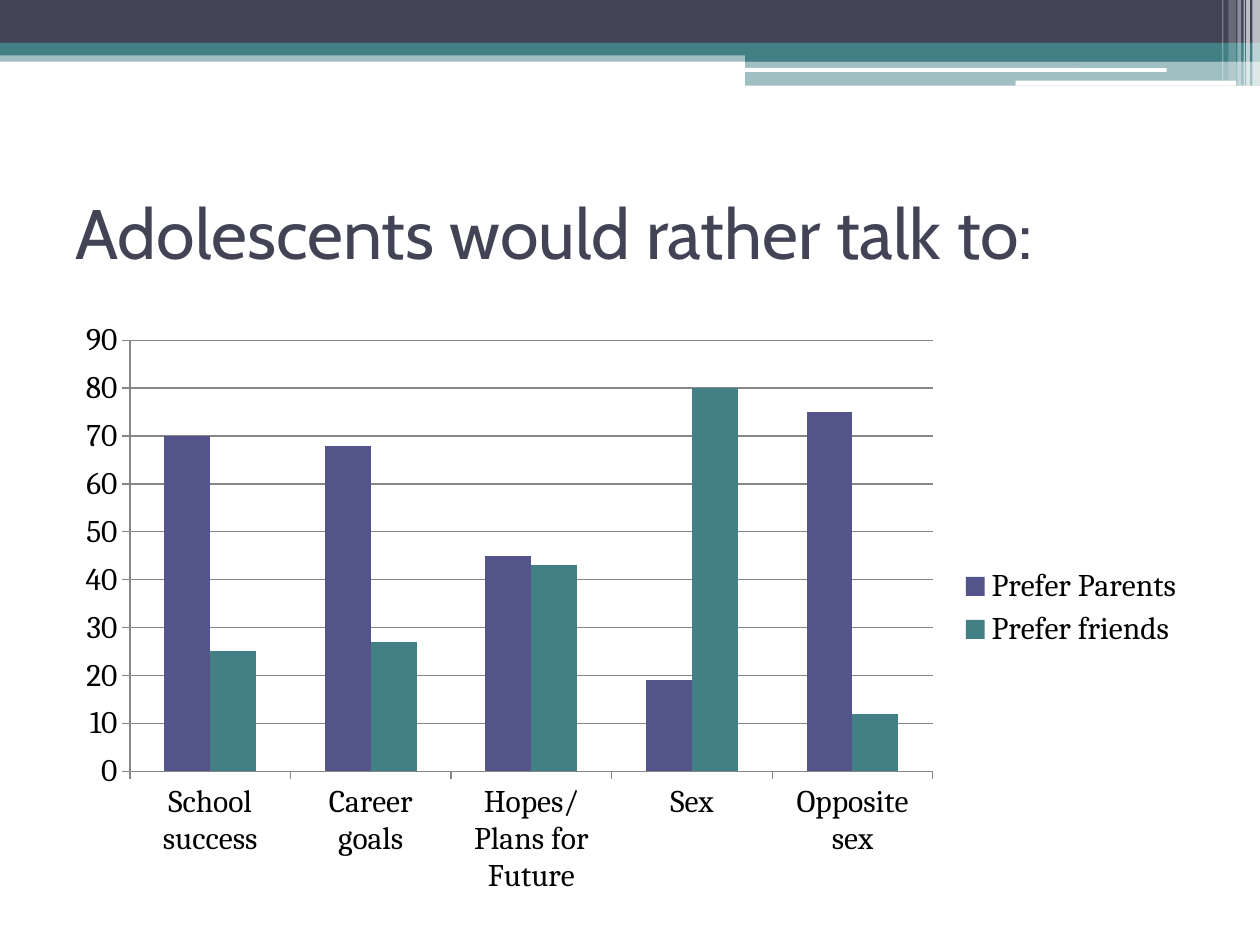
from lxml.etree import SubElement
from pptx import Presentation
from pptx.chart.data import CategoryChartData
from pptx.dml.color import RGBColor
from pptx.enum.chart import XL_CHART_TYPE as CT, XL_LEGEND_POSITION as LP, XL_TICK_MARK as TM
from pptx.enum.shapes import MSO_SHAPE as SHP
from pptx.enum.text import MSO_ANCHOR, PP_ALIGN
from pptx.oxml.ns import qn
from pptx.util import Inches, Pt

NAVY, TEAL, VIOLET, WHITE, GREY = "424456", "438086", "53548A", "FFFFFF", "868686"

prs = Presentation()
prs.slide_width, prs.slide_height = Inches(10), Inches(7.5)
s = prs.slides.add_slide(prs.slide_layouts[5])


def paint(fmt, color, alpha=100):
    """Give a fill or a line format a solid colour; alpha is opacity in percent."""
    fill = getattr(fmt, "fill", fmt)
    fill.solid()
    fill.fore_color.rgb = RGBColor.from_string(color)
    if alpha < 100:
        clr = fill._xPr.find(qn("a:solidFill"))[0]
        SubElement(clr, qn("a:alpha"), val=str(alpha * 1000))


def box(x, y, w, h):
    """Turn percentages of the slide's size into left, top, width, height."""
    pw, ph = prs.slide_width / 100, prs.slide_height / 100
    return [int(v) for v in (x * pw, y * ph, w * pw, h * ph)]


# Header bands: box in percent of the slide, colour, opacity
RECT, ROUND = SHP.RECTANGLE, SHP.ROUNDED_RECTANGLE
bands = [
    (RECT, (0, 5.33, 100, 1.2), TEAL, 50),
    (RECT, (0, 0, 100, 4.53), NAVY, 100),
    (RECT, (0, 4.53, 100, 1.33), TEAL, 100),
    (RECT, (59.15, 5.2, 40.85, 1.33), TEAL, 100),
    (RECT, (59.15, 6.4, 40.85, 2.67), TEAL, 50),
    (ROUND, (59.1, 7.2, 33.5, 0.4), WHITE, 100),
    (ROUND, (80.6, 8.53, 17.5, 0.53), WHITE, 100),
]
# Pale stripes at the right edge: left, width, height, opacity
stripes = [(99.4, 0.6, 9.07, 65), (98.9, 0.3, 9.07, 65), (98.7, 0.1, 9.07, 60),
           (98.2, 0.3, 9.07, 40), (97.5, 0.6, 8.53, 20), (97, 0.1, 8.53, 30)]
bands += [(RECT, (x, 0, w, h), WHITE, alpha) for x, w, h, alpha in stripes]

for kind, place, color, alpha in bands:
    sp = s.shapes.add_shape(kind, *box(*place))
    sp.shadow.inherit = False
    sp.line.fill.background()
    paint(sp.fill, color, alpha)

# Title
title = s.shapes.title
title.left, title.top, title.width, title.height = box(5, 16.67, 90, 15.6)
tf = title.text_frame
tf.word_wrap, tf.vertical_anchor = True, MSO_ANCHOR.MIDDLE
p = tf.paragraphs[0]
p.alignment = PP_ALIGN.LEFT
r = p.add_run()
r.text = "Adolescents would rather talk to:"
r.font.name, r.font.size = "Cabin", Pt(40)
paint(r.font, NAVY)

# Chart
data = CategoryChartData()
data.categories = ["School success", "Career goals", "Hopes/Plans for Future", "Sex", "Opposite sex"]
data.add_series("Prefer Parents", (70, 68, 45, 19, 75))
data.add_series("Prefer friends", (25, 27, 43, 80, 12))
chart = s.shapes.add_chart(CT.COLUMN_CLUSTERED, *box(5, 32.8, 90, 63.07), data).chart
chart.has_title = False
chart.font.name, chart.font.size = "Cambria", Pt(18)
paint(chart.font, "000000")
chart.has_legend = True
chart.legend.position, chart.legend.include_in_layout = LP.RIGHT, False

plot = chart.plots[0]
plot.gap_width, plot.overlap, plot.vary_by_categories = 150, 0, False
for series, color in zip(plot.series, (VIOLET, TEAL)):
    paint(series.format, color)

cat, val = chart.category_axis, chart.value_axis
val.minimum_scale, val.maximum_scale, val.major_unit = 0, 90, 10
val.has_major_gridlines = True
for axis in (cat, val):
    axis.major_tick_mark, axis.minor_tick_mark = TM.OUTSIDE, TM.NONE
for part in (cat, val, val.major_gridlines):
    part.format.line.width = Pt(0.75)
    paint(part.format.line, GREY)

prs.save("out.pptx")
